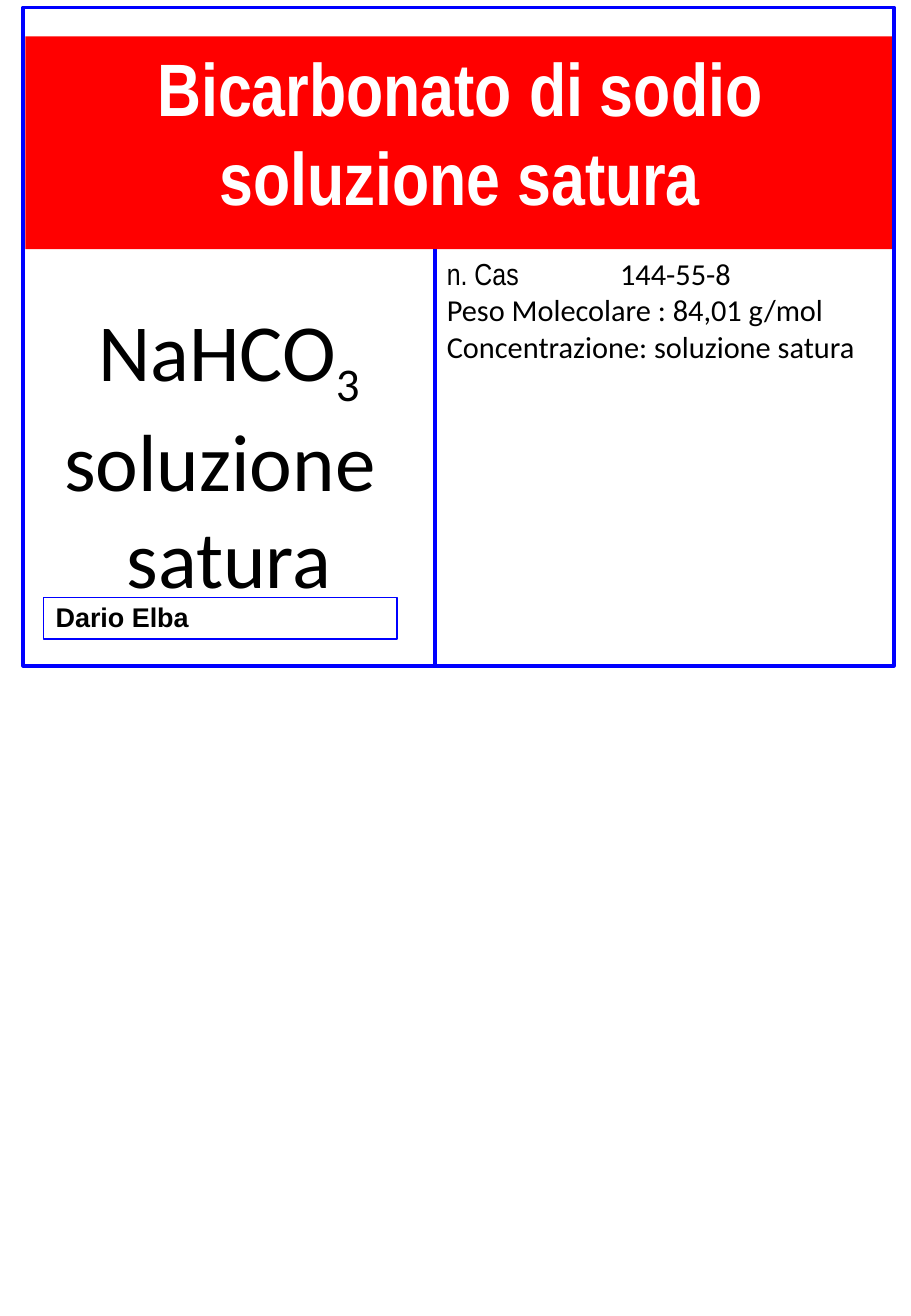
from lxml import etree
from pptx import Presentation
from pptx.dml.color import RGBColor
from pptx.enum.shapes import MSO_CONNECTOR, MSO_SHAPE
from pptx.enum.text import MSO_ANCHOR, MSO_AUTO_SIZE, PP_ALIGN
from pptx.oxml.ns import qn
from pptx.util import Inches, Pt

RED = RGBColor(0xFF, 0x00, 0x00)
BLUE = RGBColor(0x00, 0x00, 0xFF)
WHITE = RGBColor(0xFF, 0xFF, 0xFF)
BLACK = RGBColor(0x00, 0x00, 0x00)
LEFT, CENTER = PP_ALIGN.LEFT, PP_ALIGN.CENTER
TOP = MSO_ANCHOR.TOP
NO_FIT = MSO_AUTO_SIZE.NONE
RECTANGLE = MSO_SHAPE.RECTANGLE
STRAIGHT = MSO_CONNECTOR.STRAIGHT
TITLE_ONLY = 5


def to_inches(box):
    return [Inches(length) for length in box]


def write(shape, lines, size, font, color=BLACK, bold=False, align=LEFT):
    """Fill a shape with paragraphs, each given as a list of text pieces."""
    frame = shape.text_frame
    frame.word_wrap = True
    frame.auto_size = NO_FIT
    frame.vertical_anchor = TOP
    for index, pieces in enumerate(lines):
        para = frame.paragraphs[0] if index == 0 else frame.add_paragraph()
        para.alignment = align
        for piece in pieces:
            span = para.add_run()
            span.text = piece
            span.font.size = Pt(size)
            span.font.name = font
            span.font.bold = bold
            span.font.color.rgb = color
    return frame.paragraphs


def add_outline(page, box, width):
    shape = page.shapes.add_shape(RECTANGLE, *to_inches(box))
    shape.shadow.inherit = False
    shape.fill.background()
    shape.line.color.rgb = BLUE
    shape.line.width = Pt(width)
    return shape


def add_title(page, box):
    title = page.shapes.title
    title.left, title.top, title.width, title.height = to_inches(box)
    title.fill.solid()
    title.fill.fore_color.rgb = RED
    write(title, [["Bicarbonato di sodio soluzione satura"]], 44,
          "Arial Narrow", WHITE, True, CENTER)


def add_formula(page, box):
    formula = page.shapes.add_textbox(*to_inches(box))
    paras = write(formula, [["NaHCO", "3", " soluzione "], ["satura"]], 48,
                  "Calibri", align=CENTER)
    # Subscript of the formula
    paras[0].runs[1].font._element.set("baseline", "-25000")


def add_supplier(page, box):
    supplier = add_outline(page, box, 0.75)
    paras = write(supplier, [["Dario Elba"]], 16, "Arial", bold=True)
    paras[0].line_spacing = 0.9


def add_properties(page, box):
    properties = page.shapes.add_textbox(*to_inches(box))
    lines = [["n. Cas\t", " 144-55-8"],
             ["Peso Molecolare : 84,01 g/mol"],
             ["Concentrazione: soluzione satura"]]
    paras = write(properties, lines, 18, "Calibri")
    paras[0].runs[0].font.name = "Arial Narrow"
    # Tab stop before the CAS number
    tabs = etree.SubElement(paras[0]._p.get_or_add_pPr(), qn("a:tabLst"))
    etree.SubElement(tabs, qn("a:tab"), pos=str(Inches(1.37)), algn="l")


def add_divider(page, x, top, bottom):
    divider = page.shapes.add_connector(STRAIGHT, *to_inches((x, top, x, bottom)))
    divider.line.color.rgb = BLUE
    divider.line.width = Pt(2)
    etree.SubElement(divider._element.spPr, qn("a:effectLst"))


def add_label(page, box):
    """Place the bottle label inside its blue frame."""
    left, top, width, height = box
    bottom = top + height
    middle = left + 3.39
    band_bottom = top + 1.99
    add_title(page, (left + 0.02, top + 0.24, width - 0.01, 1.75))
    add_formula(page, (left, top + 2.36, middle - left, 2.52))
    add_supplier(page, (left + 0.17, top + 4.86, 2.91, 0.34))
    add_divider(page, middle, band_bottom, bottom)
    add_outline(page, box, 2)
    add_properties(page, (middle, band_bottom, 3.92, 1.01))


def main():
    deck = Presentation()
    deck.slide_width, deck.slide_height = Inches(7.5), Inches(10.83)
    page = deck.slides.add_slide(deck.slide_layouts[TITLE_ONLY])
    add_label(page, (0.19, 0.06, 7.17, 5.42))
    deck.save("out.pptx")


if __name__ == "__main__":
    main()
